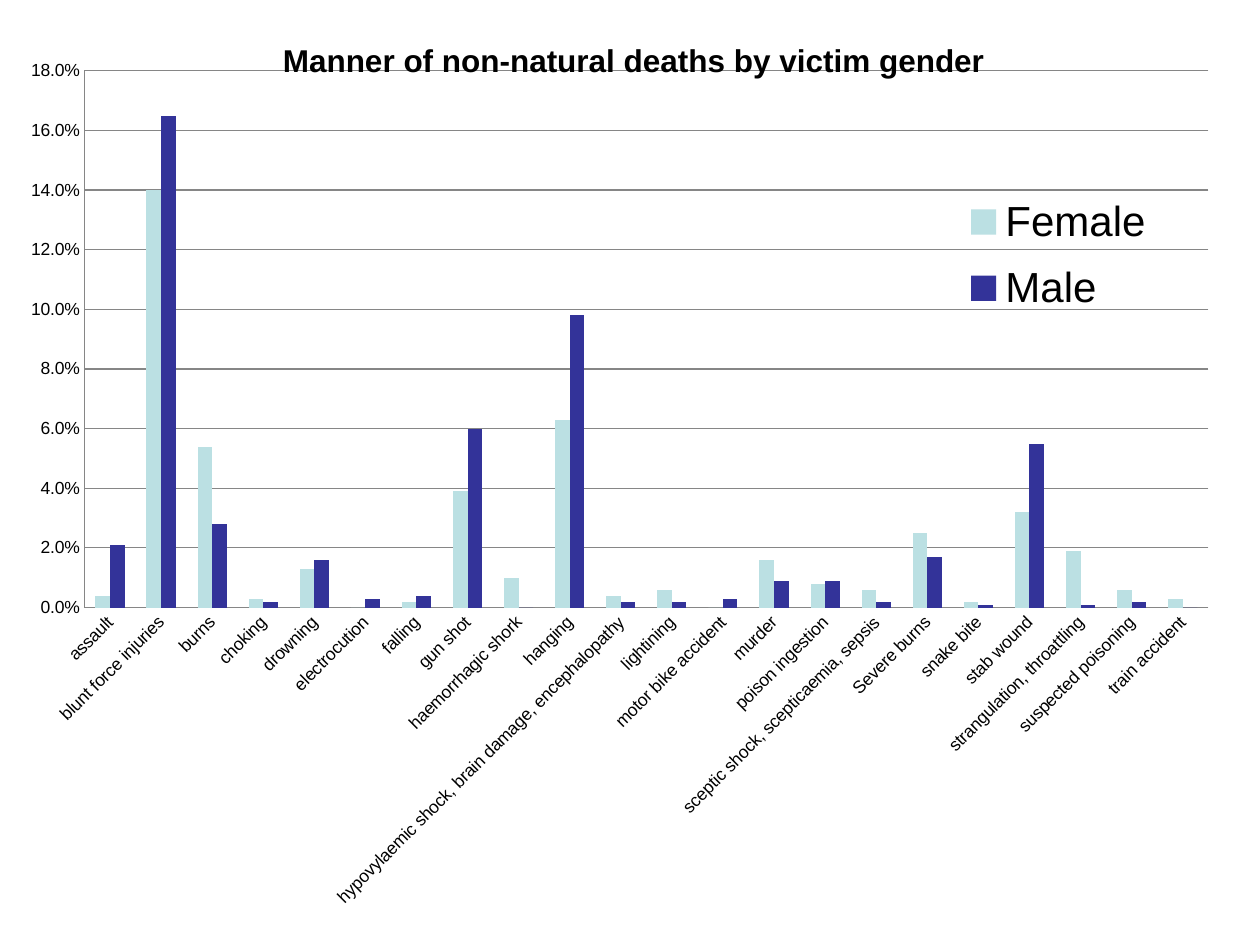
from typing import NamedTuple

from lxml import etree
from pptx import Presentation
from pptx.chart.data import CategoryChartData
from pptx.dml.color import RGBColor
from pptx.enum.chart import XL_CHART_TYPE, XL_LEGEND_POSITION, XL_TICK_MARK
from pptx.oxml.ns import qn
from pptx.util import Inches, Pt

COLUMNS = XL_CHART_TYPE.COLUMN_CLUSTERED
RIGHT = XL_LEGEND_POSITION.RIGHT
NO_TICK = XL_TICK_MARK.NONE
FONT = "Arial"
BLACK = "000000"
GRAY = "868686"
PERCENT = "0.0%"


class Manner(NamedTuple):
    name: str
    female: float
    male: float


MANNERS = [
    Manner("assault", 0.004, 0.021),
    Manner("blunt force injuries", 0.14, 0.165),
    Manner("burns", 0.054, 0.028),
    Manner("choking", 0.003, 0.002),
    Manner("drowning", 0.013, 0.016),
    Manner("electrocution", 0, 0.003),
    Manner("falling", 0.002, 0.004),
    Manner("gun shot", 0.039, 0.06),
    Manner("haemorrhagic shork", 0.01, 0),
    Manner("hanging", 0.063, 0.098),
    Manner("hypovylaemic shock, brain damage, encephalopathy", 0.004, 0.002),
    Manner("lightining", 0.006, 0.002),
    Manner("motor bike accident", 0, 0.003),
    Manner("murder", 0.016, 0.009),
    Manner("poison ingestion", 0.008, 0.009),
    Manner("sceptic shock, scepticaemia, sepsis", 0.006, 0.002),
    Manner("Severe burns", 0.025, 0.017),
    Manner("snake bite", 0.002, 0.001),
    Manner("stab wound", 0.032, 0.055),
    Manner("strangulation, throattling", 0.019, 0.001),
    Manner("suspected poisoning", 0.006, 0.002),
    Manner("train accident", 0.003, 0),
]


def rgb(color: str) -> RGBColor:
    return RGBColor.from_string(color)


def set_font(font, size: float, bold: bool = False) -> None:
    font.name = FONT
    font.size = Pt(size)
    font.bold = bold
    font.color.rgb = rgb(BLACK)


def set_line(line, color: str) -> None:
    line.color.rgb = rgb(color)
    line.width = Pt(0.75)


def place(element, index: int, inner: bool = False, **box: float) -> None:
    """Give a chart part a manual layout, in fractions of the chart."""
    for old in element.findall(qn("c:layout")):
        element.remove(old)
    layout = etree.Element(qn("c:layout"))
    manual = etree.SubElement(layout, qn("c:manualLayout"))
    if inner:
        etree.SubElement(manual, qn("c:layoutTarget"), val="inner")
    for key in ("x", "y"):
        etree.SubElement(manual, qn(f"c:{key}Mode"), val="edge")
    for key, value in box.items():
        etree.SubElement(manual, qn(f"c:{key}"), val=str(value))
    element.insert(index, layout)


def style_axis(axis) -> None:
    axis.major_tick_mark = NO_TICK
    axis.minor_tick_mark = NO_TICK
    set_font(axis.tick_labels.font, 10)
    set_line(axis.format.line, GRAY)


def add_death_chart(slide) -> None:
    data = CategoryChartData(number_format=PERCENT)
    data.categories = [m.name for m in MANNERS]
    data.add_series("Female", [m.female for m in MANNERS])
    data.add_series("Male", [m.male for m in MANNERS])
    chart = slide.shapes.add_chart(
        COLUMNS, Inches(0), Inches(0), Inches(10), Inches(7.5), data).chart
    set_font(chart.font, 10)

    chart.has_title = True
    tf = chart.chart_title.text_frame
    tf.text = "Manner of non-natural deaths by victim gender"
    set_font(tf.paragraphs[0].runs[0].font, 18, bold=True)
    place(chart.chart_title._element, 1, x=0.22, y=0.036)

    plot = chart.plots[0]
    plot.vary_by_categories = False
    plot.gap_width = 150
    plot.overlap = 0
    for series, color in zip(plot.series, ("BBE0E3", "333399")):
        series.format.fill.solid()
        series.format.fill.fore_color.rgb = rgb(color)
    plot_area = chart._chartSpace.chart.plotArea
    place(plot_area, 0, inner=True, x=0.067, y=0.075, w=0.892, h=0.568)

    style_axis(chart.category_axis)
    body = chart.category_axis._element.find(qn("c:txPr")).find(qn("a:bodyPr"))
    body.set("rot", str(-45 * 60000))
    body.set("vert", "horz")

    values = chart.value_axis
    style_axis(values)
    values.minimum_scale = 0
    values.maximum_scale = 0.18
    values.major_unit = 0.02
    values.tick_labels.number_format = PERCENT
    values.tick_labels.number_format_is_linked = False
    values.has_major_gridlines = True
    set_line(values.major_gridlines.format.line, GRAY)

    chart.has_legend = True
    legend = chart.legend
    legend.position = RIGHT
    legend.include_in_layout = False
    set_font(legend.font, 24)
    place(legend._element, 1, x=0.75, y=0.19, w=0.18, h=0.16)


def main() -> None:
    prs = Presentation()
    prs.slide_width = Inches(10)
    prs.slide_height = Inches(7.5)
    add_death_chart(prs.slides.add_slide(prs.slide_layouts[6]))
    prs.save("out.pptx")


if __name__ == "__main__":
    main()
